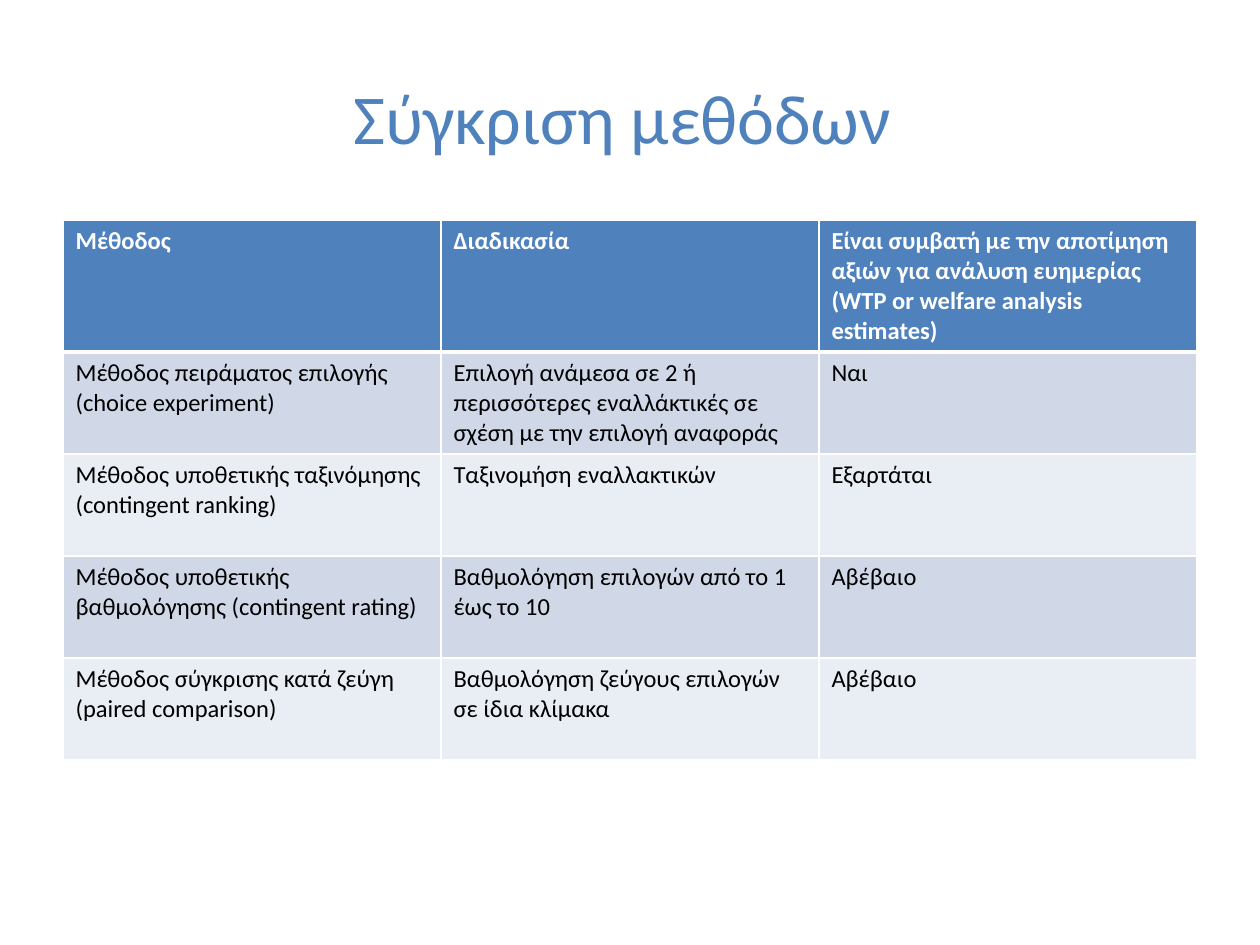
from dataclasses import dataclass

from lxml import etree
from pptx import Presentation
from pptx import util as u
from pptx.dml.color import RGBColor
from pptx.enum import text
from pptx.oxml import ns

PX = 914400 // 126  # EMU per px


@dataclass(frozen=True)
class Theme:
    font: str = "Calibri"
    title_pt: int = 40
    cell_pt: int = 14
    accent: str = "4F81BD"
    white: str = "FFFFFF"
    black: str = "000000"
    bands: tuple = ("D0D8E8", "E9EDF4")


theme = Theme()
HEADER = [
    "Μέθοδος",
    "Διαδικασία",
    "Είναι συμβατή με την αποτίμηση αξιών για ανάλυση ευημερίας "
    "(WTP or welfare analysis estimates)",
]
METHODS = [
    ["Μέθοδος πειράματος επιλογής (choice experiment)",
     "Επιλογή ανάμεσα σε 2 ή περισσότερες εναλλάκτικές σε σχέση με την επιλογή αναφοράς",
     "Ναι"],
    ["Μέθοδος υποθετικής ταξινόμησης (contingent ranking)",
     "Ταξινομήση εναλλακτικών",
     "Εξαρτάται"],
    ["Μέθοδος υποθετικής βαθμολόγησης (contingent rating)",
     "Βαθμολόγηση επιλογών από το 1 έως το 10",
     "Αβέβαιο"],
    ["Μέθοδος σύγκρισης κατά ζεύγη (paired comparison)",
     "Βαθμολόγηση ζεύγους επιλογών σε ίδια κλίμακα",
     "Αβέβαιο"],
]


def add_run(p, words, size, color, bold=False):
    r = p.add_run()
    r.text = words
    r.font.name = theme.font
    r.font.size = u.Pt(size)
    r.font.bold = bold
    r.font.color.rgb = RGBColor.from_string(color)


def set_border(cell, side, width):
    """Draw a white line of width points on side L, R, T or B; call before filling."""
    ln = etree.SubElement(cell._tc.get_or_add_tcPr(), ns.qn(f"a:ln{side}"), w=str(u.Pt(width)))
    fill = etree.SubElement(ln, ns.qn("a:solidFill"))
    etree.SubElement(fill, ns.qn("a:srgbClr"), val=theme.white)


prs = Presentation()
prs.slide_width, prs.slide_height = u.Inches(10), u.Inches(7.5)
s = prs.slides.add_slide(prs.slide_layouts[5])

title = s.shapes.title
title.left, title.top, title.width, title.height = (n * PX for n in (63, 38, 1134, 158))
tf = title.text_frame
tf.vertical_anchor = text.MSO_ANCHOR.MIDDLE
p = tf.paragraphs[0]
p.alignment = text.PP_ALIGN.CENTER
add_run(p, "Σύγκριση μεθόδων ", theme.title_pt, theme.accent)

rows = [HEADER] + METHODS
heights = [132] + [102] * len(METHODS)
table = s.shapes.add_table(
    len(rows), len(HEADER), 63 * PX, 220 * PX, 1134 * PX, sum(heights) * PX
).table
for col in table.columns:
    col.width = 378 * PX

for i, row in enumerate(rows):
    table.rows[i].height = heights[i] * PX
    is_header = i == 0
    fill = theme.accent if is_header else theme.bands[(i - 1) % 2]
    color = theme.white if is_header else theme.black
    for j, words in enumerate(row):
        cell = table.cell(i, j)
        for side in "LRTB":
            # The rule below the header is shared by the first two rows.
            thick = (i, side) in ((0, "B"), (1, "T"))
            set_border(cell, side, 3 if thick else 1)
        cell.fill.solid()
        cell.fill.fore_color.rgb = RGBColor.from_string(fill)
        add_run(cell.text_frame.paragraphs[0], words, theme.cell_pt, color, is_header)

prs.save("out.pptx")
